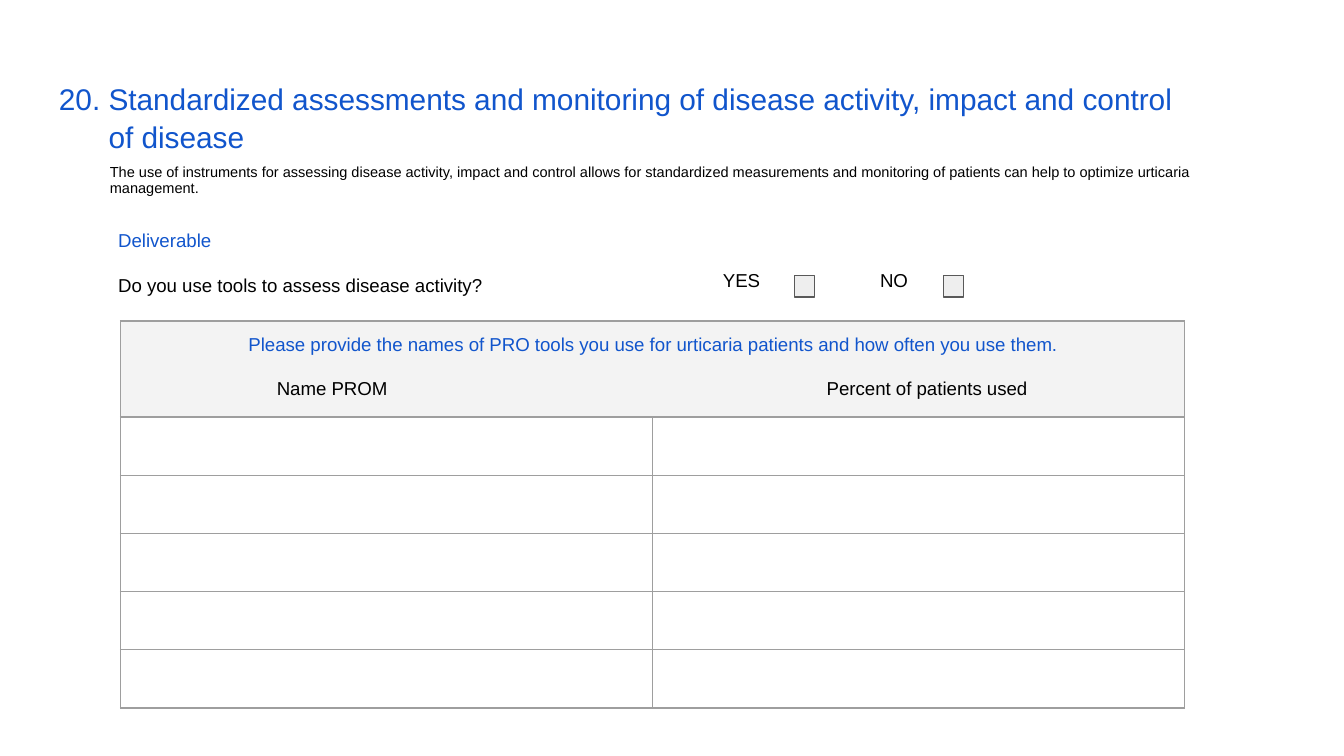
from dataclasses import dataclass
from typing import Optional

from lxml import etree
from pptx import Presentation
from pptx.dml.color import RGBColor
from pptx.enum import shapes, text
from pptx.oxml import ns
from pptx.util import Pt

COLORS = {"blue": "1155CC", "black": "000000", "box": "EEEEEE", "outline": "595959",
          "header": "F3F3F3", "border": "9E9E9E"}
FONT = "Arial"
INSET = 7.2


@dataclass
class Line:
    words: str
    size: float = 10
    color: str = "black"
    spacing: Optional[float] = None
    before: float = 0
    after: float = 0
    align: text.PP_ALIGN = text.PP_ALIGN.LEFT
    hanging: float = 0
    tabs: tuple[float, ...] = ()


@dataclass
class Block:
    left: float
    top: float
    width: float
    height: float
    lines: list[Line]


@dataclass
class Choice:
    label: str
    label_left: float
    box_left: float


def rgb(name: str) -> RGBColor:
    return RGBColor.from_string(COLORS[name])


def write(frame, lines: list[Line]) -> None:
    for index, line in enumerate(lines):
        paragraph = frame.paragraphs[0] if index == 0 else frame.add_paragraph()
        paragraph.text = line.words
        paragraph.alignment = line.align
        paragraph.line_spacing = line.spacing
        paragraph.space_before = Pt(line.before)
        paragraph.space_after = Pt(line.after)
        properties = paragraph._p.get_or_add_pPr()
        if line.hanging:
            properties.set("marL", str(Pt(line.hanging)))
            properties.set("indent", str(-Pt(line.hanging)))
        if line.tabs:
            stops = etree.SubElement(properties, ns.qn("a:tabLst"))
            for position in line.tabs:
                etree.SubElement(stops, ns.qn("a:tab"), pos=str(Pt(position)), algn="l")
        paragraph.font.name = FONT
        paragraph.font.size = Pt(line.size)
        paragraph.font.color.rgb = rgb(line.color)


def add_block(slide, block: Block) -> None:
    frame = slide.shapes.add_textbox(
        Pt(block.left), Pt(block.top), Pt(block.width), Pt(block.height)).text_frame
    frame.word_wrap = True
    frame.margin_left = frame.margin_right = Pt(INSET)
    frame.margin_top = frame.margin_bottom = Pt(INSET)
    write(frame, block.lines)


def add_choice(slide, choice: Choice) -> None:
    label = Line(choice.label, spacing=1.15, before=6, after=12)
    add_block(slide, Block(choice.label_left, 135.4, 36, 26.6, [label]))
    checkbox = slide.shapes.add_shape(
        shapes.MSO_SHAPE.RECTANGLE, Pt(choice.box_left), Pt(147.6), Pt(10.8), Pt(11.5))
    checkbox.shadow.inherit = False
    checkbox.fill.solid()
    checkbox.fill.fore_color.rgb = rgb("box")
    checkbox.line.color.rgb = rgb("outline")
    checkbox.line.width = Pt(0.75)


def add_borders(cell) -> None:
    properties = cell._tc.get_or_add_tcPr()
    for side in ("lnL", "lnR", "lnT", "lnB"):
        border = etree.SubElement(properties, ns.qn(f"a:{side}"), w=str(Pt(0.75)))
        fill = etree.SubElement(border, ns.qn("a:solidFill"))
        etree.SubElement(fill, ns.qn("a:srgbClr"), val=COLORS["border"])


def add_prom_table(slide, heading: list[Line], header_height: float,
                   row_height: float, blank_rows: int) -> None:
    height = header_height + row_height * blank_rows
    table = slide.shapes.add_table(
        blank_rows + 1, 2, Pt(64.5), Pt(172), Pt(570.2), Pt(height)).table
    table.first_row = False
    table.horz_banding = False
    for index, row in enumerate(table.rows):
        row.height = Pt(row_height if index else header_height)
        for cell in row.cells:
            add_borders(cell)
            cell.margin_top = cell.margin_bottom = Pt(INSET if index == 0 else 0)
            if index:
                cell.fill.background()
            else:
                cell.fill.solid()
                cell.fill.fore_color.rgb = rgb("header")
    header = table.cell(0, 0)
    header.merge(table.cell(0, 1))
    write(header.text_frame, heading)


def main() -> None:
    deck = Presentation()
    deck.slide_width, deck.slide_height = Pt(720), Pt(405)
    slide = deck.slides.add_slide(deck.slide_layouts[6])

    blocks = [
        Block(24.5, 35.3, 631.4, 45.4, [Line(
            "20. Standardized assessments and monitoring of disease activity, "
            "impact and control\vof disease",
            size=16, color="blue", spacing=1.05, hanging=26.6)]),
        Block(51.8, 80.6, 595.4, 45.4, [Line(
            "The use of instruments for assessing disease activity, impact and control "
            "allows for standardized measurements and monitoring of patients can help "
            "to optimize urticaria management.",
            size=7.8, spacing=0.95, after=12)]),
        Block(56.2, 115.2, 236.2, 51.1, [
            Line("Deliverable", color="blue", after=12.5),
            Line("Do you use tools to assess disease activity?")]),
    ]
    for block in blocks:
        add_block(slide, block)

    for choice in (Choice("YES", 380.2, 425.5), Choice("NO", 464.4, 505.4)):
        add_choice(slide, choice)

    heading = [
        Line("Please provide the names of PRO tools you use for urticaria patients "
             "and how often you use them.",
             color="blue", after=12.5, align=text.PP_ALIGN.CENTER),
        Line("\tName PROM\tPercent of patients used", tabs=(76.6, 371.2)),
    ]
    add_prom_table(slide, heading, header_height=51.4, row_height=31.2, blank_rows=5)
    deck.save("out.pptx")


if __name__ == "__main__":
    main()
